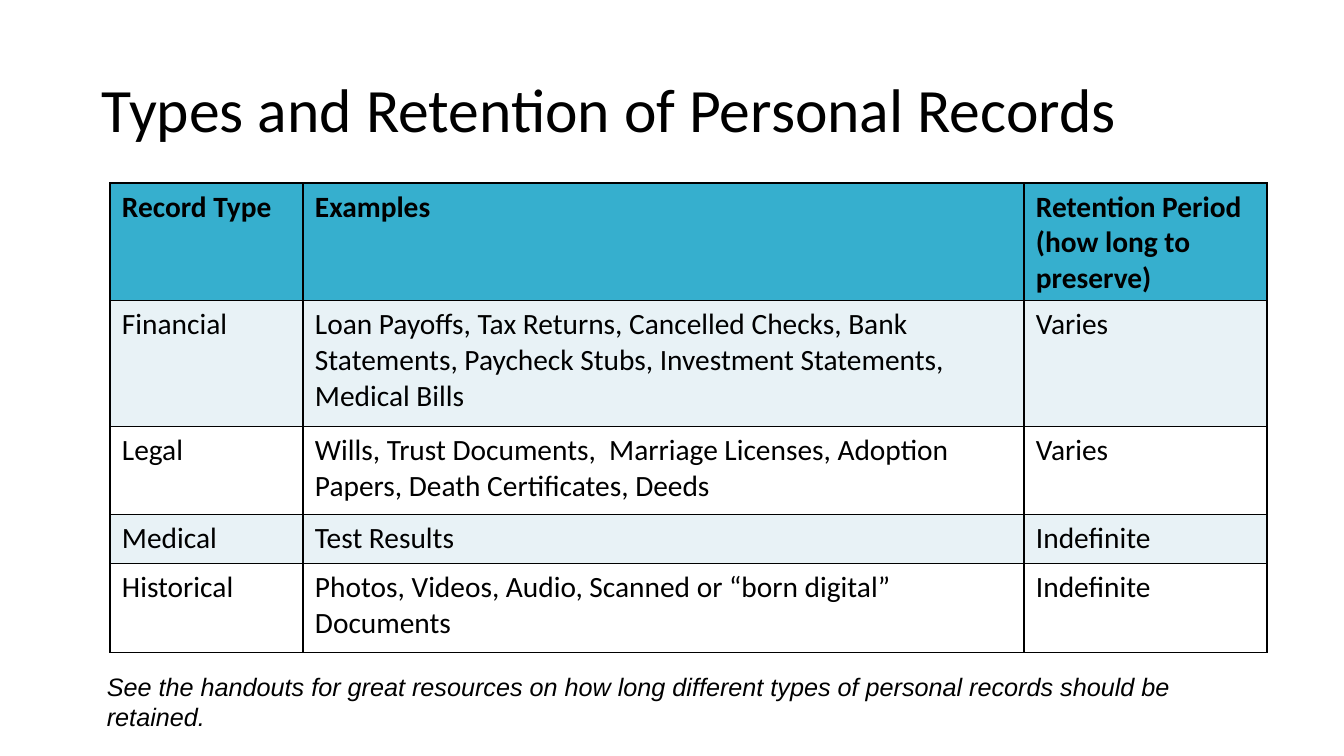
"""Build the slide on types and retention of personal records."""
from lxml import etree
from pptx import Presentation, util as u
from pptx.dml.color import RGBColor
from pptx.enum import text
from pptx.oxml import ns

PX = 914400 / 100.8
BLACK = RGBColor(0x00, 0x00, 0x00)
WHITE = RGBColor(0xFF, 0xFF, 0xFF)
HEADER_BLUE = RGBColor(0x36, 0xAF, 0xCE)
BAND_BLUE = RGBColor(0xE8, 0xF2, 0xF6)


def px(length):
    return u.Emu(round(length * PX))


def write(frame, wording, size, font="Calibri", bold=False, italic=False, spacing=None):
    frame.word_wrap = True
    paragraph = frame.paragraphs[0]
    paragraph.line_spacing = spacing
    run = paragraph.add_run()
    run.text = wording
    run.font.name = font
    run.font.size = u.Pt(size)
    run.font.bold = bold
    run.font.italic = italic
    run.font.color.rgb = BLACK


presentation = Presentation()
presentation.slide_width = px(1344)
presentation.slide_height = px(756)
slide = presentation.slides.add_slide(presentation.slide_layouts[6])

title = slide.shapes.add_textbox(px(92), px(40), px(1159), px(146))
title.text_frame.vertical_anchor = text.MSO_ANCHOR.MIDDLE
write(title.text_frame, "Types and Retention of Personal Records", 44, spacing=0.9)

records = [
    ("Record Type", "Examples", "Retention Period (how long to preserve)"),
    ("Financial", "Loan Payoffs, Tax Returns, Cancelled Checks, Bank Statements, "
     "Paycheck Stubs, Investment Statements, Medical Bills", "Varies"),
    ("Legal", "Wills, Trust Documents,  Marriage Licenses, Adoption Papers, "
     "Death Certificates, Deeds", "Varies"),
    ("Medical", "Test Results", "Indefinite"),
    ("Historical", "Photos, Videos, Audio, Scanned or “born digital” Documents", "Indefinite"),
]
column_widths = [193, 721, 243]
row_heights = [48, 126, 88, 49, 89]

table = slide.shapes.add_table(
    len(records), len(column_widths), px(110), px(183),
    px(sum(column_widths)), px(sum(row_heights))).table
table.first_row = True
table.horz_banding = False
for column, width in zip(table.columns, column_widths):
    column.width = px(width)

for row_index, (record, height) in enumerate(zip(records, row_heights)):
    table.rows[row_index].height = px(height)
    is_header = row_index == 0
    fill_color = HEADER_BLUE if is_header else BAND_BLUE if row_index % 2 else WHITE
    for column_index, wording in enumerate(record):
        cell = table.cell(row_index, column_index)
        cell.margin_left = cell.margin_right = px(12)
        cell.margin_top = cell.margin_bottom = px(6)
        properties = cell._tc.get_or_add_tcPr()
        for side in ("lnL", "lnR", "lnT", "lnB"):
            border = etree.SubElement(properties, ns.qn(f"a:{side}"), w=str(u.Pt(1)))
            border_fill = etree.SubElement(border, ns.qn("a:solidFill"))
            etree.SubElement(border_fill, ns.qn("a:srgbClr"), val=str(BLACK))
        cell.fill.solid()
        cell.fill.fore_color.rgb = fill_color
        write(cell.text_frame, wording, 21, bold=is_header)

note = slide.shapes.add_textbox(px(97), px(666), px(1180), px(40))
write(note.text_frame, "See the handouts for great resources on how long different types of "
      "personal records should be retained.", 18, font="Arial", italic=True)

presentation.save("out.pptx")
